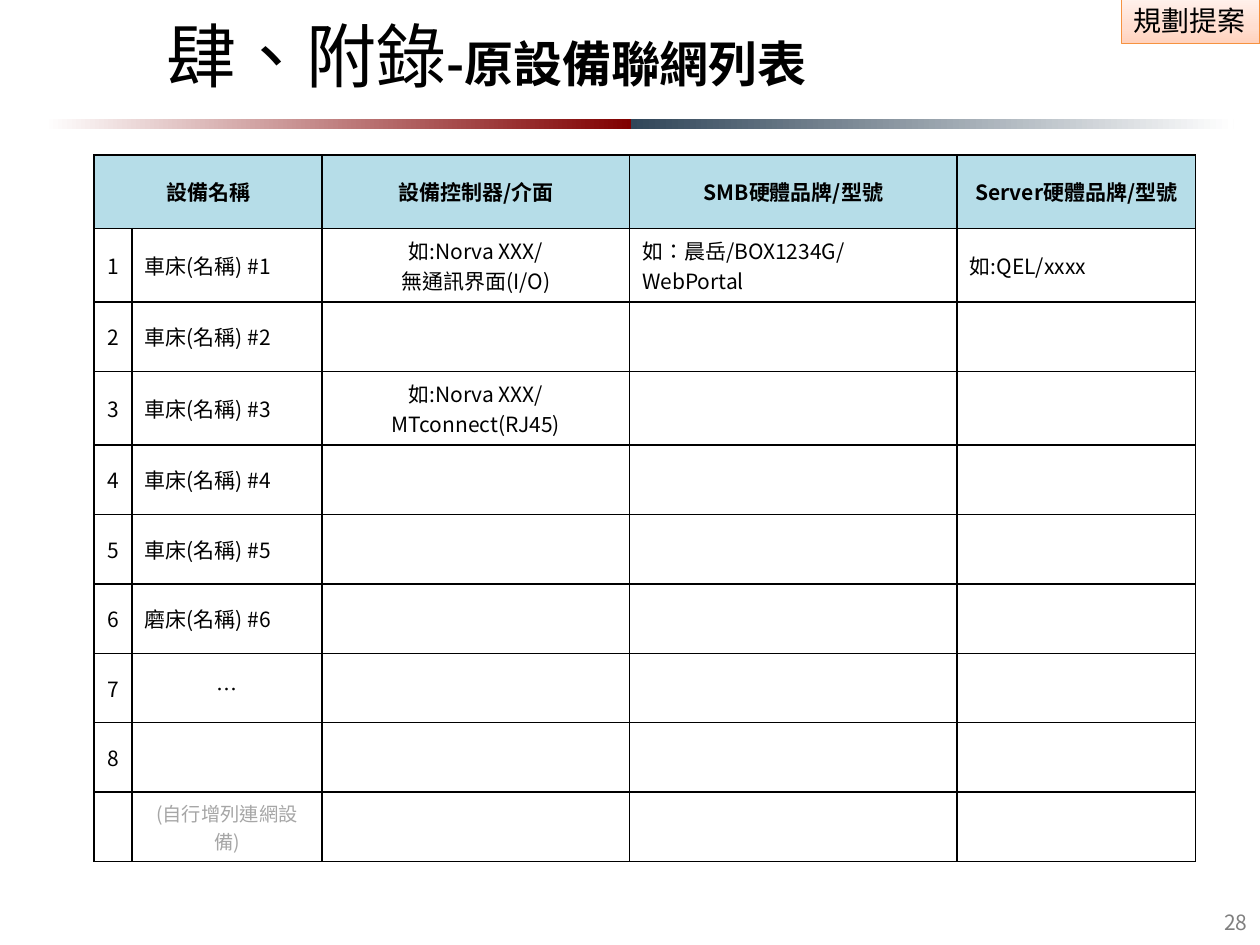
from lxml.etree import SubElement
from pptx import Presentation
from pptx.dml.color import RGBColor
from pptx.enum.shapes import MSO_SHAPE
from pptx.enum.text import MSO_ANCHOR as Anchor, PP_ALIGN as Align
from pptx.oxml.ns import qn
from pptx.util import Pt

FONT = "Noto Sans CJK SC"
COLORS = {
    "black": "000000",
    "white": "FFFFFF",
    "header": "B6DDE8",
    "hint": "A6A6A6",
    "number": "7F7F7F",
    "tag_line": "F69240",
    "red": "800000",
    "navy": "314659",
    "peach": "FFD2BD",
    "peach_mid": "FFDED0",
    "peach_light": "FFF2ED",
}
COLUMN_WIDTHS = [21.6, 108.7, 175.7, 187.2, 136.1]
ROW_HEIGHT = 39.7
TALL_ROW_HEIGHT = 42
TALL_ROWS = (0, 1, 3)
HEADERS = ["設備名稱", "", "設備控制器/介面", "SMB硬體品牌/型號", "Server硬體品牌/型號"]
ROWS = [
    ["1", "車床(名稱) #1", "如:Norva XXX/ 無通訊界面(I/O)", "如：晨岳/BOX1234G/WebPortal", "如:QEL/xxxx"],
    ["2", "車床(名稱) #2"],
    ["3", "車床(名稱) #3", "如:Norva XXX/ MTconnect(RJ45)"],
    ["4", "車床(名稱) #4"],
    ["5", "車床(名稱) #5"],
    ["6", "磨床(名稱) #6"],
    ["7", "…"],
    ["8"],
    ["", "(自行增列連網設備)"],
]
CENTERED_COLUMNS = (0, 2)
CENTERED_NAMES = ("…", "(自行增列連網設備)")


def rgb(name):
    return RGBColor.from_string(COLORS[name])


def add_span(para, text, size, color="black", bold=False):
    span = para.add_run()
    span.text = text
    font = span.font
    font.size, font.bold, font.name = Pt(size), bold, FONT
    font.color.rgb = rgb(color)
    properties = span._r.get_or_add_rPr()
    properties.set("lang", "zh-TW")
    SubElement(properties, qn("a:ea"), typeface=FONT)


def add_text_box(page, left, top, width, height):
    box = page.shapes.add_textbox(Pt(left), Pt(top), Pt(width), Pt(height))
    frame = box.text_frame
    frame.word_wrap = True
    frame.vertical_anchor = Anchor.MIDDLE
    return frame.paragraphs[0]


def add_gradient_bar(page, left, top, width, height, stops, angle=0):
    bar = page.shapes.add_shape(MSO_SHAPE.RECTANGLE, Pt(left), Pt(top), Pt(width), Pt(height))
    bar.shadow.inherit = False
    bar.line.fill.background()
    bar.fill.gradient()
    bar.fill.gradient_angle = angle
    stop_list = bar._element.spPr.find(qn("a:gradFill")).find(qn("a:gsLst"))
    stop_list.clear()
    for position, color in stops:
        stop = SubElement(stop_list, qn("a:gs"), pos=str(position * 1000))
        SubElement(stop, qn("a:srgbClr"), val=COLORS[color])
    return bar


def add_tag(page, text):
    stops = [(0, "peach"), (35, "peach_mid"), (100, "peach_light")]
    tag = add_gradient_bar(page, 640.8, -1.6, 79.2, 26.4, stops, angle=90)
    tag.line.color.rgb = rgb("tag_line")
    tag.line.width = Pt(0.75)
    frame = tag.text_frame
    frame.word_wrap = False
    frame.margin_top = frame.margin_bottom = Pt(0)
    frame.vertical_anchor = Anchor.MIDDLE
    para = frame.paragraphs[0]
    para.alignment = Align.LEFT
    add_span(para, text, 16)


def add_borders(cell):
    properties = cell._tc.get_or_add_tcPr()
    for side in ("lnL", "lnR", "lnT", "lnB"):
        line = SubElement(properties, qn(f"a:{side}"), w=str(Pt(1)))
        fill = SubElement(line, qn("a:solidFill"))
        SubElement(fill, qn("a:srgbClr"), val=COLORS["black"])


def fill_cell(cell, text, is_header, centered, is_hint):
    add_borders(cell)
    if is_header:
        cell.fill.solid()
        cell.fill.fore_color.rgb = rgb("header")
    else:
        cell.fill.background()
    cell.vertical_anchor = Anchor.MIDDLE
    if text:
        para = cell.text_frame.paragraphs[0]
        para.alignment = Align.CENTER if centered else Align.LEFT
        add_span(para, text, 11 if is_hint else 12, "hint" if is_hint else "black", is_header)


def add_device_table(page):
    rows = [HEADERS] + ROWS
    heights = [TALL_ROW_HEIGHT if index in TALL_ROWS else ROW_HEIGHT for index in range(len(rows))]
    table = page.shapes.add_table(
        len(rows), len(COLUMN_WIDTHS), Pt(53.8), Pt(88.6), Pt(sum(COLUMN_WIDTHS)), Pt(sum(heights))
    ).table
    for column, width in zip(table.columns, COLUMN_WIDTHS):
        column.width = Pt(width)
    for row_index, texts in enumerate(rows):
        is_header = row_index == 0
        table.rows[row_index].height = Pt(heights[row_index])
        for column_index in range(len(COLUMN_WIDTHS)):
            text = texts[column_index] if column_index < len(texts) else ""
            centered = is_header or column_index in CENTERED_COLUMNS or text in CENTERED_NAMES
            is_hint = text == CENTERED_NAMES[-1]
            fill_cell(table.cell(row_index, column_index), text, is_header, centered, is_hint)
    table.cell(0, 0).merge(table.cell(0, 1))


def main():
    deck = Presentation()
    deck.slide_width, deck.slide_height = Pt(720), Pt(540)
    page = deck.slides.add_slide(deck.slide_layouts[6])

    add_tag(page, "規劃提案")
    add_gradient_bar(page, 25.2, 68, 335.5, 5.8, [(0, "white"), (100, "red")])
    add_gradient_bar(page, 360.7, 68, 344.2, 5.8, [(0, "navy"), (100, "white")])

    number = add_text_box(page, 666, 516.4, 54, 23)
    number.alignment = Align.RIGHT
    number.line_spacing = Pt(12)
    add_span(number, "28", 12, "number")

    title = add_text_box(page, 88, 6.4, 481.7, 49)
    add_span(title, "肆、附錄", 40)
    add_span(title, "-原設備聯網列表", 28, bold=True)

    add_device_table(page)
    deck.save("out.pptx")


if __name__ == "__main__":
    main()
